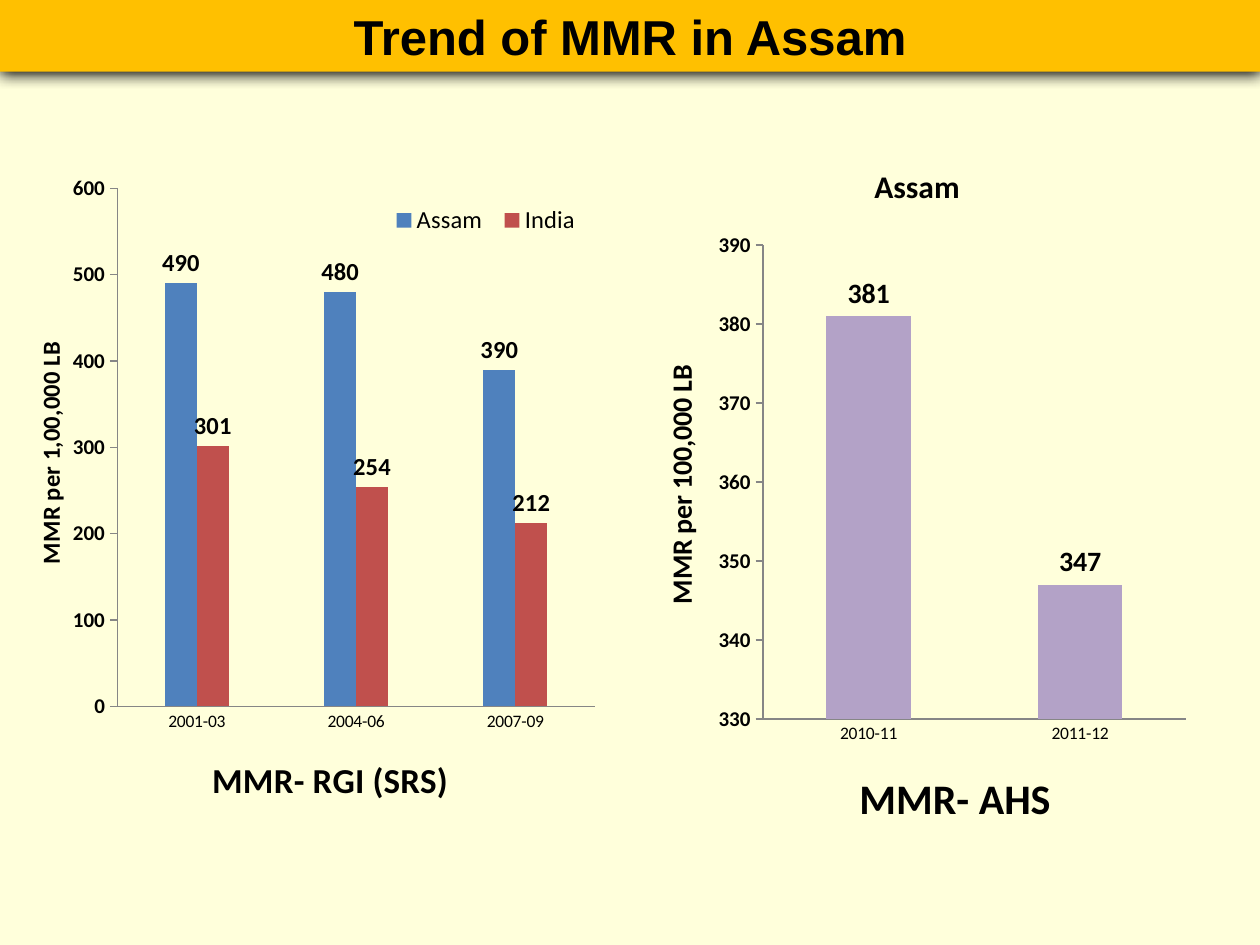
"""Build a slide comparing maternal mortality ratio trends in two column charts."""
from dataclasses import dataclass

from lxml import etree
from pptx import Presentation
from pptx.chart.data import CategoryChartData
from pptx.dml.color import RGBColor
from pptx.enum.chart import XL_CHART_TYPE, XL_LABEL_POSITION, XL_LEGEND_POSITION, XL_TICK_MARK
from pptx.enum.shapes import MSO_SHAPE
from pptx.enum.text import MSO_ANCHOR, PP_ALIGN
from pptx.oxml import parse_xml
from pptx.oxml.ns import nsdecls, qn
from pptx.util import Pt

CLUSTERED = XL_CHART_TYPE.COLUMN_CLUSTERED
OUTSIDE_END = XL_LABEL_POSITION.OUTSIDE_END
LEGEND_RIGHT = XL_LEGEND_POSITION.RIGHT
TICK_NONE = XL_TICK_MARK.NONE
TICK_OUTSIDE = XL_TICK_MARK.OUTSIDE
RECTANGLE = MSO_SHAPE.RECTANGLE
MIDDLE = MSO_ANCHOR.MIDDLE
CENTER = PP_ALIGN.CENTER

CREAM = RGBColor(0xFF, 0xFF, 0xDB)
AMBER = RGBColor(0xFF, 0xC0, 0x00)
BLACK = RGBColor(0x00, 0x00, 0x00)
GRAY = RGBColor(0x86, 0x86, 0x86)
BLUE = RGBColor(0x4F, 0x81, 0xBD)
RED = RGBColor(0xC0, 0x50, 0x4D)
LAVENDER = RGBColor(0xB3, 0xA2, 0xC7)


@dataclass(frozen=True)
class Region:
    name: str
    values: tuple[int, ...]
    color: RGBColor


@dataclass(frozen=True)
class Caption:
    text: str
    size: float
    position: tuple[float, float]


@dataclass(frozen=True)
class Survey:
    box: tuple[float, float, float, float]
    plot: tuple[float, float, float, float]
    periods: tuple[str, ...]
    regions: tuple[Region, ...]
    source: Caption
    measure: Caption
    scale: tuple[int, int, int]
    gap: int
    label_size: float
    line_width: float
    heading: Caption | None = None
    legend: tuple[float, float, float, float] | None = None


SURVEYS = (
    Survey(
        box=(16.5, 95.5, 337, 405.5),
        plot=(0.15, 0.03, 0.81, 0.73),
        periods=("2001-03", "2004-06", "2007-09"),
        regions=(
            Region("Assam", (490, 480, 390), BLUE),
            Region("India", (301, 254, 212), RED),
        ),
        source=Caption("MMR- RGI (SRS) ", 20, (0.3, 0.82)),
        measure=Caption("MMR per 1,00,000 LB", 14, (0, 0.24)),
        scale=(0, 600, 100),
        gap=300,
        label_size=14,
        line_width=0.75,
        legend=(0.6, 0.05, 0.35, 0.05),
    ),
    Survey(
        box=(366, 78.5, 318, 410.5),
        plot=(0.22, 0.15, 0.76, 0.66),
        periods=("2010-11", "2011-12"),
        regions=(Region("Assam", (381, 347), LAVENDER),),
        source=Caption("MMR- AHS", 24, (0.38, 0.87)),
        measure=Caption("MMR per 100,000 LB", 16, (0.03, 0.31)),
        scale=(330, 390, 10),
        gap=150,
        label_size=16,
        line_width=1.25,
        heading=Caption("Assam", 18, (0.41, 0.03)),
    ),
)


def place(part: etree._Element, index: int, position: tuple[float, ...], inner: bool = False) -> None:
    """Give a chart part a manual layout in fractions of the chart area."""
    for old in part.findall(qn("c:layout")):
        part.remove(old)
    target = '<c:layoutTarget val="inner"/>' if inner else ""
    modes = '<c:xMode val="edge"/><c:yMode val="edge"/>'
    sizes = "".join(f'<c:{key} val="{value}"/>' for key, value in zip("xywh", position))
    part.insert(index, parse_xml(
        f'<c:layout {nsdecls("c")}><c:manualLayout>{target}{modes}{sizes}</c:manualLayout></c:layout>'))


def style_font(font, size: float, bold: bool, family: str = "Calibri") -> None:
    """Set the face, size, weight and black colour of a font."""
    font.name = family
    font.size = Pt(size)
    font.bold = bold
    font.color.rgb = BLACK


def write_caption(title, caption: Caption) -> None:
    """Write and place a chart or axis title."""
    title.text_frame.text = caption.text
    style_font(title.text_frame.paragraphs[0].runs[0].font, caption.size, True)
    place(title._element, 1, caption.position)


def style_axis(axis, caption: Caption, size: float, bold: bool, tick: XL_TICK_MARK, width: float) -> None:
    """Format one axis with its title."""
    axis.has_major_gridlines = False
    axis.major_tick_mark = tick
    axis.minor_tick_mark = TICK_NONE
    axis.format.line.color.rgb = GRAY
    axis.format.line.width = Pt(width)
    style_font(axis.tick_labels.font, size, bold)
    write_caption(axis.axis_title, caption)


def draw_survey(slide, survey: Survey) -> None:
    """Draw the column chart of one survey."""
    data = CategoryChartData()
    data.categories = survey.periods
    for region in survey.regions:
        data.add_series(region.name, region.values)
    chart = slide.shapes.add_chart(CLUSTERED, *map(Pt, survey.box), data).chart
    style_font(chart.font, 10, False)

    chart.has_title = survey.heading is not None
    if survey.heading:
        write_caption(chart.chart_title, survey.heading)
    chart.has_legend = survey.legend is not None
    if survey.legend:
        chart.legend.position = LEGEND_RIGHT
        chart.legend.include_in_layout = False
        style_font(chart.legend.font, 14, False)
        place(chart.legend._element, 1, survey.legend)

    style_axis(chart.category_axis, survey.source, 10, False, TICK_NONE, survey.line_width)
    style_axis(chart.value_axis, survey.measure, 12, True, TICK_OUTSIDE, survey.line_width)
    axis = chart.value_axis
    axis.minimum_scale, axis.maximum_scale, axis.major_unit = survey.scale

    columns = chart.plots[0]
    columns.gap_width = survey.gap
    columns.overlap = 0
    columns.vary_by_categories = False
    for series, region in zip(columns.series, survey.regions):
        series.format.fill.solid()
        series.format.fill.fore_color.rgb = region.color
        labels = series.data_labels
        labels.show_value = True
        labels.position = OUTSIDE_END
        style_font(labels.font, survey.label_size, True)
    place(chart._chartSpace.xpath(".//c:plotArea")[0], 0, survey.plot, inner=True)


def draw_banner(slide, text: str) -> None:
    """Draw the shadowed heading band across the top."""
    banner = slide.shapes.add_shape(RECTANGLE, 0, 0, Pt(720), Pt(41))
    banner.fill.solid()
    banner.fill.fore_color.rgb = AMBER
    banner.line.fill.background()
    banner.shadow.inherit = False
    effects = banner._element.spPr.find(qn("a:effectLst"))
    effects.append(parse_xml(
        f'<a:outerShdw {nsdecls("a")} blurRad="{Pt(8.5)}" dist="{Pt(1)}" dir="5400000" '
        'algn="t" rotWithShape="0"><a:srgbClr val="000000"/></a:outerShdw>'))
    frame = banner.text_frame
    frame.word_wrap = True
    frame.vertical_anchor = MIDDLE
    frame.text = text
    heading = frame.paragraphs[0]
    heading.alignment = CENTER
    style_font(heading.runs[0].font, 28, True, "Arial")


def main() -> None:
    """Build and save the slide."""
    deck = Presentation()
    deck.slide_width, deck.slide_height = Pt(720), Pt(540)
    slide = deck.slides.add_slide(deck.slide_layouts[6])
    slide.background.fill.solid()
    slide.background.fill.fore_color.rgb = CREAM
    for survey in SURVEYS:
        draw_survey(slide, survey)
    draw_banner(slide, "Trend of MMR in Assam")
    deck.save("out.pptx")


if __name__ == "__main__":
    main()
